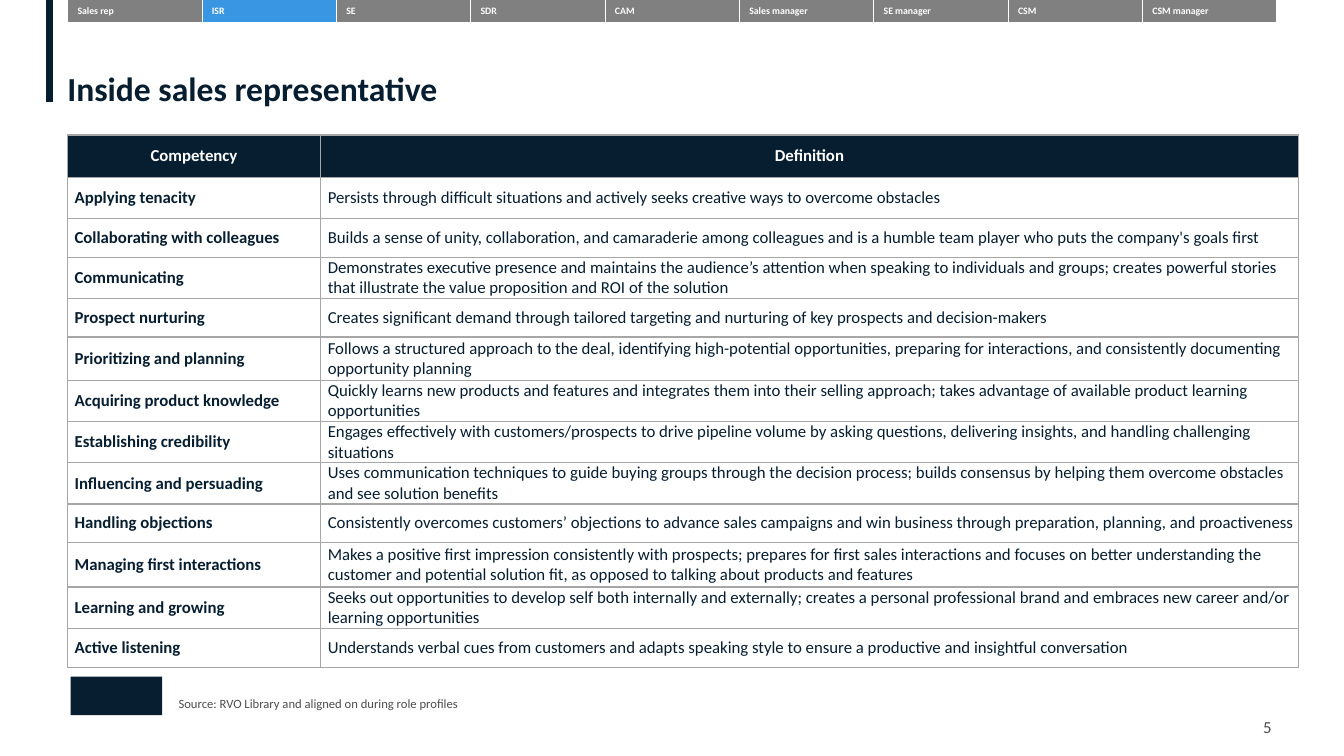
import pptx
import pptx.util
import pptx.dml.color
import pptx.enum.shapes
import pptx.enum.text
import pptx.oxml.ns
from lxml import etree

Cm = pptx.util.Cm
Pt = pptx.util.Pt
RGBColor = pptx.dml.color.RGBColor
Align = pptx.enum.text.PP_ALIGN
Anchor = pptx.enum.text.MSO_ANCHOR
qn = pptx.oxml.ns.qn

NAVY = RGBColor(0x07, 0x1E, 0x31)
BLUE = RGBColor(0x38, 0x96, 0xE3)
GREY = RGBColor(0x80, 0x80, 0x80)
RULE_GREY = RGBColor(0xA6, 0xA6, 0xA6)
TEXT_GREY = RGBColor(0x4D, 0x4D, 0x4D)
WHITE = RGBColor(0xFF, 0xFF, 0xFF)
FONT = "Calibri"
PLAIN_TABLE = "{2D5ABB26-0587-4C30-8999-92F81FD0307C}"

TITLE = "Inside sales representative"
SOURCE = "Source: RVO Library and aligned on during role profiles"
PAGE_NUMBER = "5"
ROLES = ["Sales rep", "ISR", "SE", "SDR", "CAM", "Sales manager", "SE manager", "CSM", "CSM manager"]
CURRENT_ROLE = "ISR"
HEADINGS = ("Competency", "Definition")
HEADING_HEIGHT = 1.07
COMPETENCIES = [
    ("Applying tenacity", 1.04,
     "Persists through difficult situations and actively seeks creative ways to overcome obstacles"),
    ("Collaborating with colleagues", 0.97,
     "Builds a sense of unity, collaboration, and camaraderie among colleagues and is a humble team player "
     "who puts the company's goals first"),
    ("Communicating", 1.04,
     "Demonstrates executive presence and maintains the audience’s attention when speaking to individuals "
     "and groups; creates powerful stories that illustrate the value proposition and ROI of the solution"),
    ("Prospect nurturing", 0.97,
     "Creates significant demand through tailored targeting and nurturing of key prospects and decision-makers"),
    ("Prioritizing and planning", 1.09,
     "Follows a structured approach to the deal, identifying high-potential opportunities, preparing for "
     "interactions, and consistently documenting opportunity planning"),
    ("Acquiring product knowledge", 1.04,
     "Quickly learns new products and features and integrates them into their selling approach; takes "
     "advantage of available product learning opportunities"),
    ("Establishing credibility", 1.04,
     "Engages effectively with customers/prospects to drive pipeline volume by asking questions, delivering "
     "insights, and handling challenging situations"),
    ("Influencing and persuading", 1.04,
     "Uses communication techniques to guide buying groups through the decision process; builds consensus "
     "by helping them overcome obstacles and see solution benefits"),
    ("Handling objections", 0.97,
     "Consistently overcomes customers’ objections to advance sales campaigns and win business through "
     "preparation, planning, and proactiveness"),
    ("Managing first interactions", 1.12,
     "Makes a positive first impression consistently with prospects; prepares for first sales interactions "
     "and focuses on better understanding the customer and potential solution fit, as opposed to talking "
     "about products and features"),
    ("Learning and growing", 1.04,
     "Seeks out opportunities to develop self both internally and externally; creates a personal "
     "professional brand and embraces new career and/or learning opportunities"),
    ("Active listening", 0.99,
     "Understands verbal cues from customers and adapts speaking style to ensure a productive and "
     "insightful conversation"),
]

LEFT = 1.7
NAV_WIDTH, NAV_HEIGHT = 30.48, 0.56
TABLE_TOP = 3.4
COLUMN_WIDTHS = (6.38, 24.64)
CELL_INDENT = 0.18


def write(paragraph, text, size, color, bold=False, align=Align.LEFT):
    paragraph.alignment = align
    span = paragraph.add_run()
    span.text = text
    span.font.color.rgb = color
    for name, value in {"name": FONT, "size": Pt(size), "bold": bold}.items():
        setattr(span.font, name, value)


def add_text(page, place, text, size, color, bold=False, anchor=Anchor.TOP, spacing=1.0):
    frame = page.shapes.add_textbox(*map(Cm, place)).text_frame
    values = {"word_wrap": True, "vertical_anchor": anchor, "margin_left": 0,
              "margin_right": 0, "margin_top": 0, "margin_bottom": 0}
    for name, value in values.items():
        setattr(frame, name, value)
    frame.paragraphs[0].line_spacing = spacing
    write(frame.paragraphs[0], text, size, color, bold)


def add_plain_table(page, left, top, widths, heights):
    frame = page.shapes.add_table(len(heights), len(widths), Cm(left), Cm(top),
                                  Cm(sum(widths)), Cm(sum(heights)))
    table = frame.table
    table.first_row = table.horz_banding = False
    frame._element.find(".//" + qn("a:tableStyleId")).text = PLAIN_TABLE
    for column, width in zip(table.columns, widths):
        column.width = Cm(width)
    for row, height in zip(table.rows, heights):
        row.height = Cm(height)
    return table


def style_cell(cell, sides, border, width, fill=None):
    properties = cell._tc.get_or_add_tcPr()
    for side in sides:
        line = etree.SubElement(properties, qn("a:ln" + side), w=str(Pt(width)))
        solid = etree.SubElement(line, qn("a:solidFill"))
        etree.SubElement(solid, qn("a:srgbClr"), val=str(border))
    if fill is None:
        cell.fill.background()
    else:
        cell.fill.solid()
        cell.fill.fore_color.rgb = fill


def add_accent(page):
    accent = page.shapes.add_connector(pptx.enum.shapes.MSO_CONNECTOR.STRAIGHT,
                                       Cm(1.25), Cm(0), Cm(1.25), Cm(2.57))
    accent.line.color.rgb = NAVY
    accent.line.width = Pt(5)
    etree.SubElement(accent._element.spPr, qn("a:effectLst"))


def add_emblem(page):
    emblem = page.shapes.add_shape(pptx.enum.shapes.MSO_SHAPE.RECTANGLE,
                                   Cm(1.78), Cm(17.05), Cm(2.31), Cm(0.97))
    emblem.shadow.inherit = False
    emblem.fill.solid()
    emblem.fill.fore_color.rgb = NAVY
    emblem.line.fill.background()


def add_competencies(page):
    heights = [HEADING_HEIGHT] + [height for _, height, _ in COMPETENCIES]
    rows = [HEADINGS] + [(name, definition) for name, _, definition in COMPETENCIES]
    table = add_plain_table(page, LEFT, TABLE_TOP, COLUMN_WIDTHS, heights)
    for i, row in enumerate(rows):
        heading = i == 0
        for j, text in enumerate(row):
            cell = table.cell(i, j)
            values = {"margin_left": 0 if heading else Cm(CELL_INDENT), "margin_right": 0,
                      "margin_top": 0, "margin_bottom": 0, "vertical_anchor": Anchor.MIDDLE}
            for name, value in values.items():
                setattr(cell, name, value)
            style_cell(cell, "LRTB", RULE_GREY, 1, NAVY if heading else None)
            write(cell.text_frame.paragraphs[0], text, 12, WHITE if heading else NAVY,
                  heading or j == 0, Align.CENTER if heading else Align.LEFT)


def add_role_bar(page):
    widths = [NAV_WIDTH / len(ROLES)] * len(ROLES)
    table = add_plain_table(page, LEFT, 0, widths, [NAV_HEIGHT])
    for j, role in enumerate(ROLES):
        cell = table.cell(0, j)
        style_cell(cell, "LR", WHITE, 0.5, BLUE if role == CURRENT_ROLE else GREY)
        write(cell.text_frame.paragraphs[0], role, 7, WHITE, True)


def main():
    deck = pptx.Presentation()
    deck.slide_width, deck.slide_height = Cm(33.87), Cm(19.05)
    page = deck.slides.add_slide(deck.slide_layouts[6])
    add_accent(page)
    add_emblem(page)
    add_text(page, (LEFT, 1.78, 31.52, 0.97), TITLE, 24, NAVY, True, Anchor.BOTTOM, 0.9)
    add_competencies(page)
    add_text(page, (31.83, 18.06, 0.86, 0.51), PAGE_NUMBER, 12, TEXT_GREY, anchor=Anchor.MIDDLE)
    add_text(page, (4.5, 17.53, 16.48, 0.38), SOURCE, 9, TEXT_GREY)
    add_role_bar(page)
    deck.save("out.pptx")


if __name__ == "__main__":
    main()
